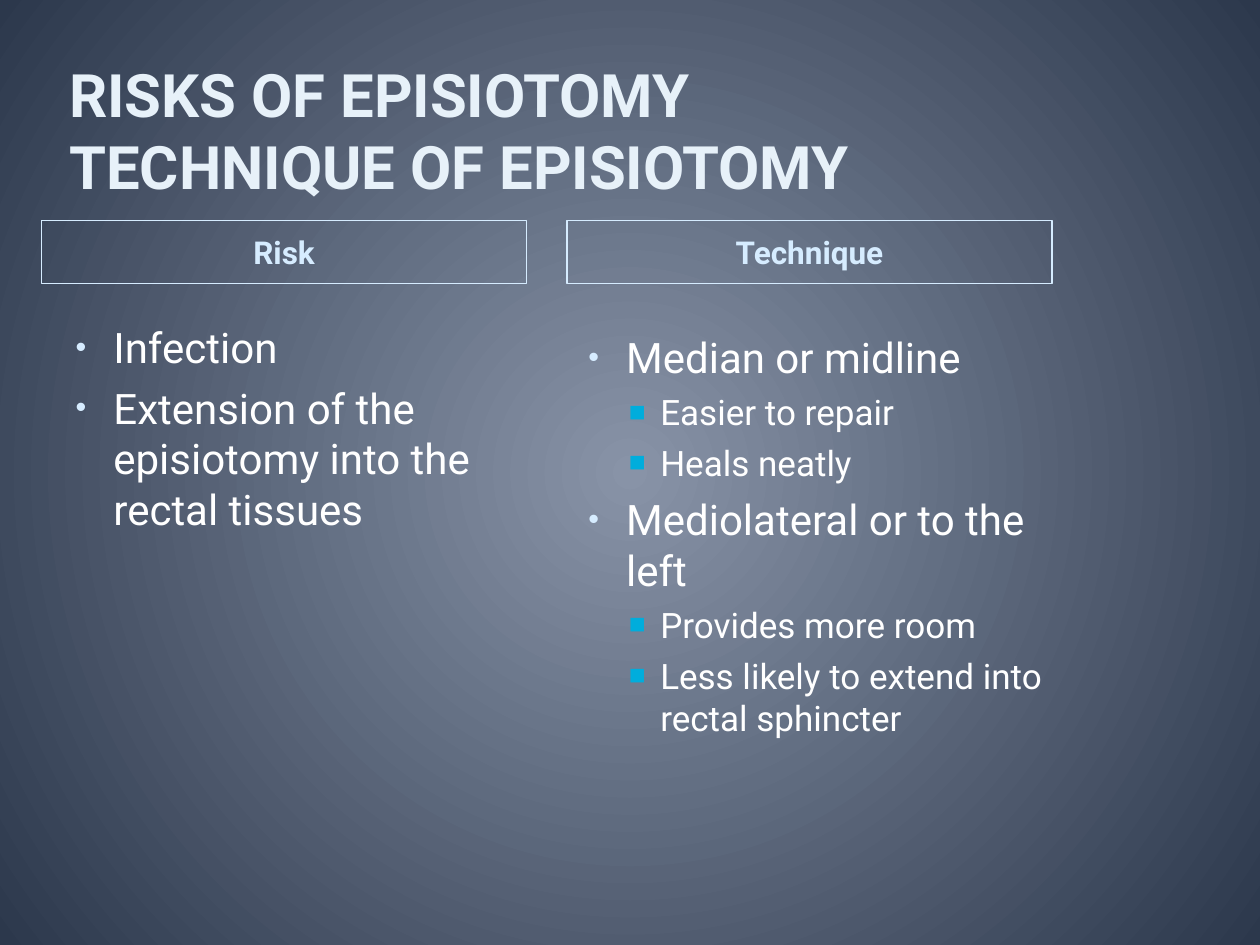
from lxml import etree
from pptx import Presentation
from pptx.dml.color import RGBColor
from pptx.enum.text import MSO_ANCHOR, MSO_AUTO_SIZE, PP_ALIGN
from pptx.oxml.ns import qn
from pptx.util import Inches, Pt

LEFT, CENTER = PP_ALIGN.LEFT, PP_ALIGN.CENTER
TOP, MIDDLE, BOTTOM = MSO_ANCHOR.TOP, MSO_ANCHOR.MIDDLE, MSO_ANCHOR.BOTTOM
NO_FIT = MSO_AUTO_SIZE.NONE

FONT = "Roboto"
WHITE = RGBColor(0xFF, 0xFF, 0xFF)
TITLE_BLUE = RGBColor(0xE7, 0xF1, 0xF9)
PALE_BLUE = RGBColor(0xD6, 0xEC, 0xFF)
CYAN = RGBColor(0x00, 0xAD, 0xDC)
BG_CENTER = RGBColor(0x88, 0x93, 0xA7)
BG_EDGE = RGBColor(0x2C, 0x38, 0x4C)

COLUMN_WIDTH = 3.85
LEVELS = [
    dict(size=24, before=6, margin=0.3, indent=-0.3, bullet=("•", PALE_BLUE, 73)),
    dict(size=20, before=5, margin=0.57, indent=-0.25, bullet=("■", CYAN, 80)),
]
RISKS = [
    (0, "Infection"),
    (0, "Extension of the episiotomy into the rectal tissues"),
]
TECHNIQUES = [
    (0, "Median or midline"),
    (1, "Easier to repair"),
    (1, "Heals neatly"),
    (0, "Mediolateral or to the left"),
    (1, "Provides more room"),
    (1, "Less likely to extend into rectal sphincter"),
]


def set_background(slide):
    """Fill the slide with a gradient that spreads from its centre."""
    fill = slide.background.fill
    fill.gradient()
    for stop, color in zip(fill.gradient_stops, (BG_CENTER, BG_EDGE)):
        stop.color.rgb = color
    grad = slide.element.find(".//" + qn("a:gradFill"))
    grad.remove(grad.find(qn("a:lin")))
    circle = etree.SubElement(grad, qn("a:path"), path="circle")
    sides = dict.fromkeys("ltrb", "50000")
    etree.SubElement(circle, qn("a:fillToRect"), **sides)


def place(sp, left, top, width, height, anchor=TOP):
    """Position a placeholder and return its text frame."""
    sp.left, sp.top = Inches(left), Inches(top)
    sp.width, sp.height = Inches(width), Inches(height)
    tf = sp.text_frame
    tf.word_wrap = True
    tf.auto_size = NO_FIT
    tf.vertical_anchor = anchor
    return tf


def write(p, text, size=24, color=WHITE, bold=False, align=LEFT, before=0):
    """Write formatted text into a paragraph, with a line break at each newline."""
    p.alignment = align
    p.space_before = Pt(before)
    for i, line in enumerate(text.split("\n")):
        if i:
            p.add_line_break()
        r = p.add_run()
        r.text = line
        r.font.name = FONT
        r.font.size = Pt(size)
        r.font.bold = bold
        r.font.color.rgb = color


def set_bullet(p, char, color, percent, margin, indent):
    """Give a paragraph a coloured bullet and a hanging indent."""
    pPr = p._p.get_or_add_pPr()
    pPr.set("marL", str(Inches(margin)))
    pPr.set("indent", str(Inches(indent)))
    buClr = etree.SubElement(pPr, qn("a:buClr"))
    etree.SubElement(buClr, qn("a:srgbClr"), val=str(color))
    etree.SubElement(pPr, qn("a:buSzPct"), val=str(percent * 1000))
    etree.SubElement(pPr, qn("a:buFont"), typeface="Arial")
    etree.SubElement(pPr, qn("a:buChar"), char=char)


def add_title(sp, text):
    """Fill the title placeholder."""
    tf = place(sp, 0.5, 0.35, 7.92, 1.25, BOTTOM)
    tf.margin_left = tf.margin_right = Inches(0.05)
    tf.margin_top = tf.margin_bottom = 0
    write(tf.paragraphs[0], text, size=34.2, color=TITLE_BLUE, bold=True)


def add_heading(sp, left, text):
    """Fill an outlined column heading."""
    tf = place(sp, left, 1.75, COLUMN_WIDTH, 0.5, MIDDLE)
    sp.line.color.rgb = PALE_BLUE
    sp.line.width = Pt(1)
    write(tf.paragraphs[0], text, size=18, color=PALE_BLUE, bold=True, align=CENTER)


def add_list(sp, left, top, items):
    """Fill a placeholder with a two-level bulleted list."""
    tf = place(sp, left, top, COLUMN_WIDTH, 6.37 - top)
    for i, (level, text) in enumerate(items):
        p = tf.add_paragraph() if i else tf.paragraphs[0]
        style = LEVELS[level]
        p.level = level
        set_bullet(p, *style["bullet"], style["margin"], style["indent"])
        write(p, text, size=style["size"], before=style["before"] if i else 0)


def main():
    """Build the slide and save it."""
    prs = Presentation()
    prs.slide_width, prs.slide_height = Inches(10), Inches(7.5)
    slide = prs.slides.add_slide(prs.slide_layouts.get_by_name("Comparison"))
    set_background(slide)
    title, risk_head, risk_list, technique_head, technique_list = list(slide.placeholders)[:5]
    add_title(title, "RISKS OF EPISIOTOMY\nTECHNIQUE OF EPISIOTOMY")
    add_heading(risk_head, 0.33, "Risk")
    add_heading(technique_head, 4.5, "Technique")
    add_list(risk_list, 0.5, 2.5, RISKS)
    add_list(technique_list, 4.57, 2.58, TECHNIQUES)
    prs.save("out.pptx")


if __name__ == "__main__":
    main()
